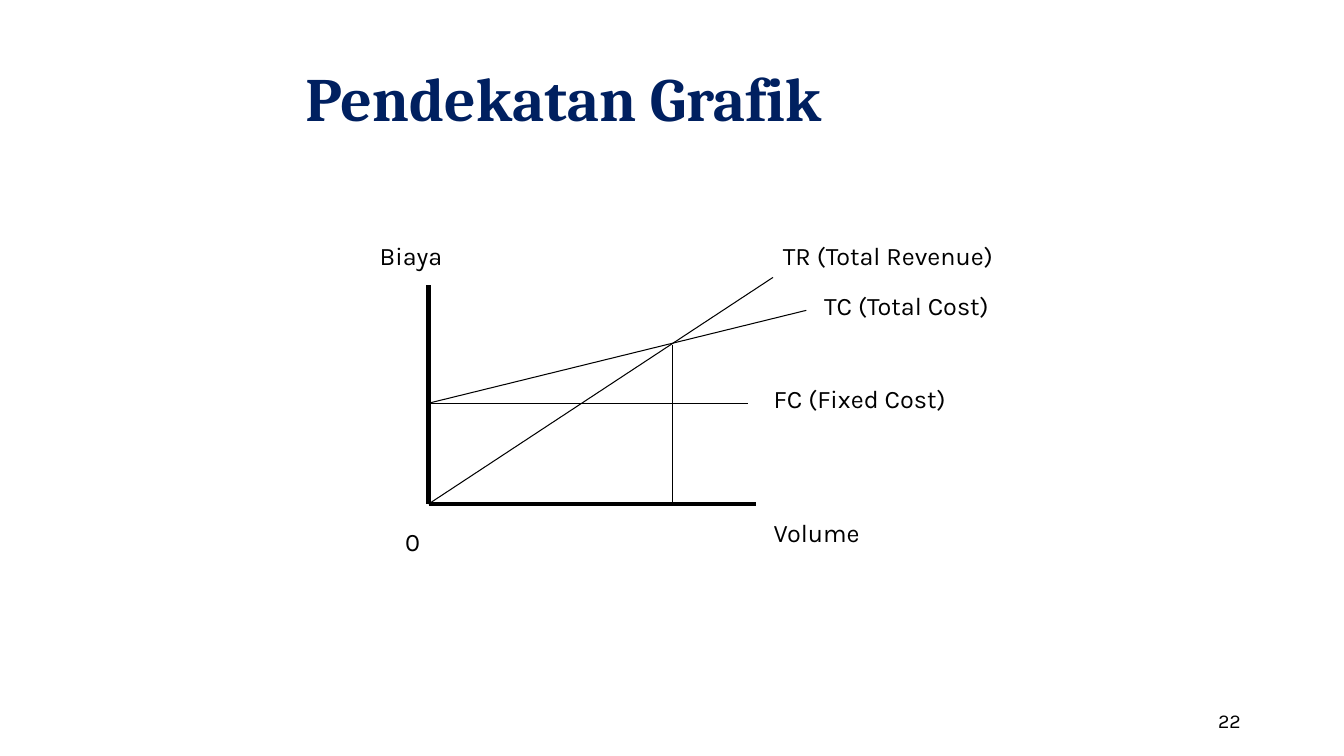
from lxml.etree import SubElement
from pptx import Presentation
from pptx.dml.color import RGBColor
from pptx.enum.shapes import MSO_CONNECTOR
from pptx.enum.text import MSO_ANCHOR, MSO_AUTO_SIZE, PP_ALIGN
from pptx.oxml.ns import qn
from pptx.util import Cm, Pt

COLORS = {"title": "002060", "ink": "000000"}
HEADING_FONT, BODY_FONT = "Cambria", "Karla"


def style_font(font, name, size, color, bold=False):
    font.name, font.size, font.bold = name, Pt(size), bold
    font.color.rgb = RGBColor.from_string(COLORS[color])


def place(shape, left, top, width, height):
    shape.left, shape.top = Cm(left), Cm(top)
    shape.width, shape.height = Cm(width), Cm(height)


def add_text(page, text, left, top, width, size=18, align=PP_ALIGN.LEFT):
    box = page.shapes.add_textbox(Cm(left), Cm(top), Cm(width), Cm(1.02))
    frame = box.text_frame
    frame.word_wrap = True
    para = frame.paragraphs[0]
    para.text, para.alignment = text, align
    style_font(para.font, BODY_FONT, size, "ink")
    return frame


def add_line(page, start, end, weight):
    line = page.shapes.add_connector(
        MSO_CONNECTOR.STRAIGHT, *(Cm(value) for value in (*start, *end)))
    line.line.color.rgb = RGBColor.from_string(COLORS["ink"])
    line.line.width = Pt(weight)
    SubElement(line._element.spPr, qn("a:effectLst"))


def add_title(page, left, top, width, height):
    title = page.shapes.title
    place(title, left, top, width, height)
    frame = title.text_frame
    frame.word_wrap, frame.auto_size = True, MSO_AUTO_SIZE.NONE
    frame.vertical_anchor = MSO_ANCHOR.MIDDLE
    para = frame.paragraphs[0]
    para.alignment = PP_ALIGN.LEFT
    # The tall closing space sets the line height of the title.
    for text, size, bold in (("Pendekatan Grafik", 44, True), (" ", 72, False)):
        span = para.add_run()
        span.text = text
        style_font(span.font, HEADING_FONT, size, "title", bold)


def add_break_even_graph(page, left, top):
    """Draw the axes, cost lines and labels from the given top left corner."""
    origin, fixed_cost, break_even = (1.48, 6.78), (1.48, 4.24), (7.62, 2.77)
    lines = [
        ((origin[0], 1.27), origin, 3),
        (origin, (9.73, origin[1]), 3),
        (fixed_cost, (9.53, fixed_cost[1]), 0.75),
        (origin, (10.16, 1.07), 0.75),
        (fixed_cost, (11, 1.9), 0.75),
        (break_even, (break_even[0], origin[1]), 0.75),
    ]
    for start, end, weight in lines:
        add_line(page, (left + start[0], top + start[1]),
                 (left + end[0], top + end[1]), weight)

    labels = [
        ("TR (Total Revenue)", 10.16, 0, 6.15),
        ("TC (Total Cost)", 11.2, 1.27, 6.15),
        ("FC (Fixed Cost)", 9.93, 3.61, 5.5),
        ("Volume", 9.93, 6.98, 2.97),
        ("Biaya", 0, 0, 2.54),
        ("0", 0.64, 7.21, 1.7),
    ]
    for text, across, down, width in labels:
        add_text(page, text, left + across, top + down, width)


def add_page_number(page, left, top, width):
    frame = add_text(page, "22", left, top, width, 14, PP_ALIGN.RIGHT)
    frame.vertical_anchor = MSO_ANCHOR.MIDDLE


def main():
    deck = Presentation()
    deck.slide_width, deck.slide_height = Cm(33.87), Cm(19.05)
    page = deck.slides.add_slide(deck.slide_layouts[5])
    add_title(page, 7.44, 0.71, 21.64, 2.69)
    add_break_even_graph(page, 9.32, 5.92)
    add_page_number(page, 22.43, 17.65, 9.09)
    deck.save("out.pptx")


if __name__ == "__main__":
    main()
